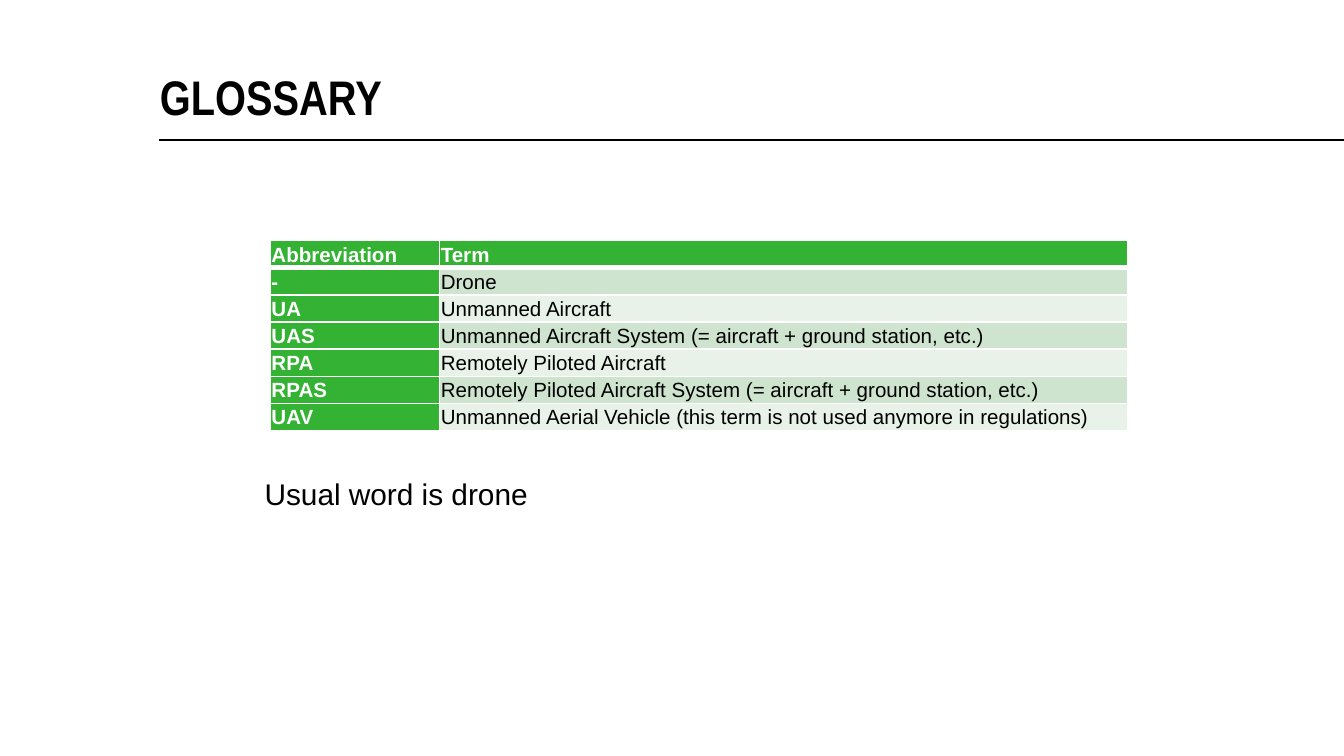
from typing import NamedTuple

from lxml.etree import SubElement
from pptx import Presentation
from pptx.dml.color import RGBColor
from pptx.enum.shapes import MSO_CONNECTOR as Connector
from pptx.enum.text import MSO_ANCHOR as Anchor, MSO_AUTO_SIZE as AutoSize, PP_ALIGN as Align
from pptx.oxml.ns import qn
from pptx.util import Inches, Pt

COLORS = {
    "black": "000000",
    "white": "FFFFFF",
    "green": "34B233",
    "dark_band": "CEE4CE",
    "light_band": "E8F2E8",
}
SLIDE_WIDTH = 10
SLIDE_HEIGHT = SLIDE_WIDTH * 9 / 16
COLUMN_WIDTHS = (1.26, 5.12)
ROW_HEIGHT = 0.2


class Entry(NamedTuple):
    abbreviation: str
    term: str


ENTRIES = [
    Entry("Abbreviation", "Term"),
    Entry("-", "Drone"),
    Entry("UA", "Unmanned Aircraft"),
    Entry("UAS", "Unmanned Aircraft System (= aircraft + ground station, etc.)"),
    Entry("RPA", "Remotely Piloted Aircraft"),
    Entry("RPAS", "Remotely Piloted Aircraft System (= aircraft + ground station, etc.)"),
    Entry("UAV", "Unmanned Aerial Vehicle (this term is not used anymore in regulations)"),
]


def color(name: str) -> RGBColor:
    return RGBColor.from_string(COLORS[name])


def format_text(paragraph, size: float, color_name: str, bold: bool = False, font: str = "Arial") -> None:
    paragraph.alignment = Align.LEFT
    for run in paragraph.runs:
        run.font.size = Pt(size)
        run.font.name = font
        run.font.bold = bold
        run.font.color.rgb = color(color_name)


def set_borders(cell, top: float, bottom: float) -> None:
    properties = cell._tc.get_or_add_tcPr()
    for side, width in (("L", 1), ("R", 1), ("T", top), ("B", bottom)):
        line = SubElement(properties, qn(f"a:ln{side}"), w=str(Pt(width)))
        fill = SubElement(line, qn("a:solidFill"))
        SubElement(fill, qn("a:srgbClr"), val=COLORS["white"])


def fill_cell(cell, text: str, row: int, column: int) -> None:
    heading = row == 0 or column == 0
    band = "dark_band" if row % 2 else "light_band"
    set_borders(cell, top=3 if row == 1 else 1, bottom=3 if row == 0 else 1)
    cell.fill.solid()
    cell.fill.fore_color.rgb = color("green" if heading else band)
    cell.margin_left = cell.margin_right = cell.margin_top = cell.margin_bottom = Inches(0.01)
    cell.vertical_anchor = Anchor.MIDDLE
    cell.text_frame.text = text
    paragraph = cell.text_frame.paragraphs[0]
    paragraph.line_spacing = 1.07
    paragraph.space_after = Pt(8)
    format_text(paragraph, 11, "white" if heading else "black", bold=heading)


def add_glossary(slide, entries: list[Entry]) -> None:
    table = slide.shapes.add_table(
        len(entries), len(COLUMN_WIDTHS), Inches(2.01), Inches(1.79),
        Inches(sum(COLUMN_WIDTHS)), Inches(ROW_HEIGHT * len(entries)),
    ).table
    for column, width in zip(table.columns, COLUMN_WIDTHS):
        column.width = Inches(width)
    for row, entry in enumerate(entries):
        table.rows[row].height = Inches(ROW_HEIGHT)
        for column, text in enumerate(entry):
            fill_cell(table.cell(row, column), text, row, column)


def add_rule(slide) -> None:
    rule = slide.shapes.add_connector(
        Connector.STRAIGHT, Inches(1.18), Inches(1.04), Inches(SLIDE_WIDTH), Inches(1.04)
    )
    rule.line.color.rgb = color("black")
    rule.line.width = Pt(1)
    SubElement(rule._element.spPr, qn("a:effectLst"))


def set_title(slide, text: str) -> None:
    title = slide.shapes.title
    title.left, title.top = Inches(1.19), Inches(0.33)
    title.width, title.height = Inches(8.5), Inches(0.6)
    frame = title.text_frame
    frame.text = text
    frame.auto_size = AutoSize.NONE
    frame.vertical_anchor = Anchor.BOTTOM
    frame.margin_left = frame.margin_right = frame.margin_top = frame.margin_bottom = 0
    paragraph = frame.paragraphs[0]
    paragraph.line_spacing = Pt(25)
    format_text(paragraph, 26, "black", bold=True, font="Arial Narrow")


def add_remark(slide, text: str) -> None:
    remark = slide.shapes.add_textbox(Inches(1.87), Inches(3.49), Inches(2.18), Inches(0.37))
    frame = remark.text_frame
    frame.text = text
    frame.word_wrap = False
    frame.auto_size = AutoSize.SHAPE_TO_FIT_TEXT
    format_text(frame.paragraphs[0], 16, "black")


def main() -> None:
    presentation = Presentation()
    presentation.slide_width = Inches(SLIDE_WIDTH)
    presentation.slide_height = Inches(SLIDE_HEIGHT)
    slide = presentation.slides.add_slide(presentation.slide_layouts[5])
    add_rule(slide)
    set_title(slide, "GLOSSARY")
    add_glossary(slide, ENTRIES)
    add_remark(slide, "Usual word is drone")
    presentation.save("out.pptx")


if __name__ == "__main__":
    main()
